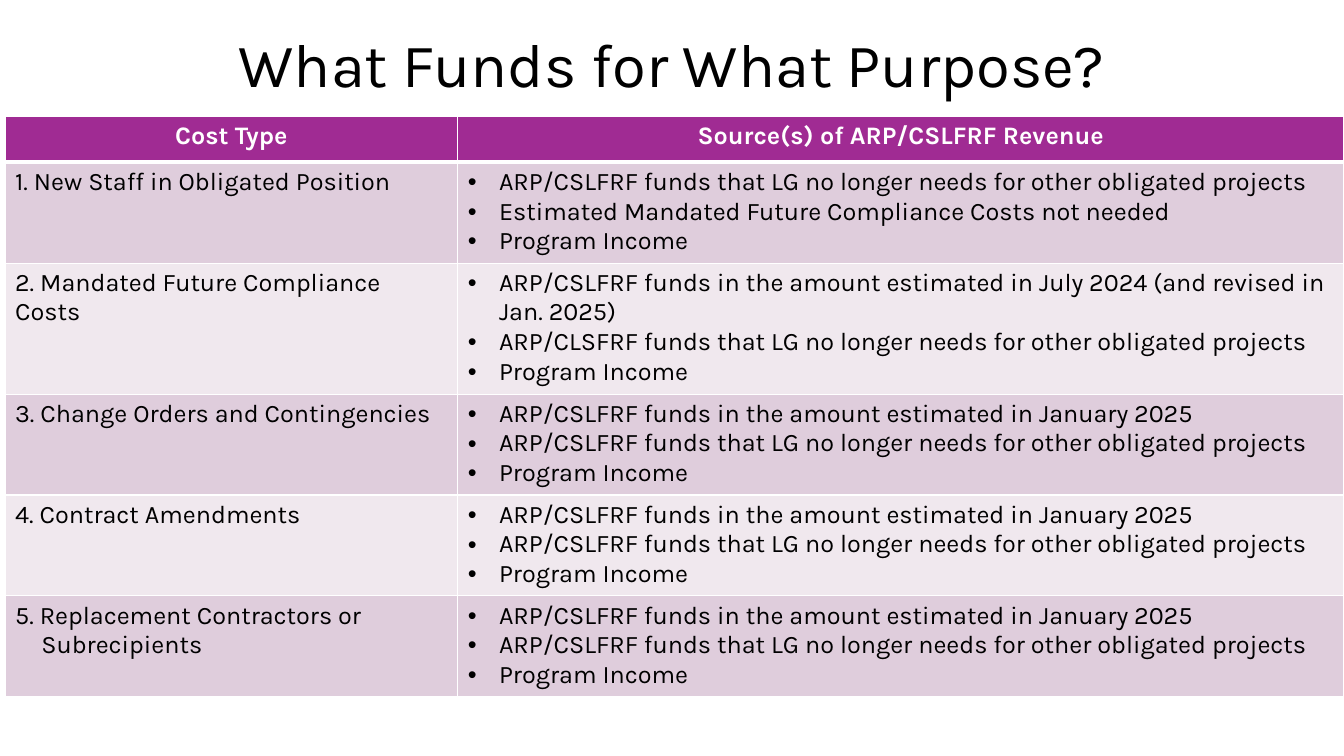
from lxml import etree
from pptx import Presentation, util as u
from pptx.dml.color import RGBColor
from pptx.enum import text
from pptx.oxml.ns import qn

# Content
TITLE = "What Funds for What Purpose?"
HEADS = ("Cost Type", "Source(s) of ARP/CSLFRF Revenue")
SPARE = "ARP/CSLFRF funds that LG no longer needs for other obligated projects"
JAN = "ARP/CSLFRF funds in the amount estimated in January 2025"
INCOME = "Program Income"
COSTS = [
    ("1. New Staff in Obligated Position",
     (SPARE, "Estimated Mandated Future Compliance Costs not needed", INCOME)),
    ("2. Mandated Future Compliance Costs",
     ("ARP/CSLFRF funds in the amount estimated in July 2024 (and revised in Jan. 2025)",
      "ARP/CLSFRF funds that LG no longer needs for other obligated projects", INCOME)),
    ("3. Change Orders and Contingencies", (JAN, SPARE, INCOME)),
    ("4. Contract Amendments", (JAN, SPARE, INCOME)),
    ("5. Replacement Contractors or Subrecipients", (JAN, SPARE, INCOME)),
]
HANG = {5: 26}  # hanging indent of the cost name, by row

# Look
FONT = "Karla"
HUES = {"ink": "000000", "white": "FFFFFF", "head": "A02B93",
        "odd": "DFCDDC", "even": "F0E8EE"}
COLS = (449, 879)
ROW = 46
BULLET = 31


def px(n):
    return u.Emu(n * 9144)  # 100 px to the inch


def rgb(name):
    return RGBColor.from_string(HUES[name])


def write(par, words, size, hue="ink", bold=False):
    run = par.add_run()
    run.text = words
    font = run.font
    font.name, font.size, font.bold = FONT, u.Pt(size), bold
    font.color.rgb = rgb(hue)


def indent(par, left, mark=None):
    props = par._p.get_or_add_pPr()
    props.set("marL", str(px(left)))
    props.set("indent", str(-px(left)))
    if mark:
        etree.SubElement(props, qn("a:buFont")).set("typeface", "Arial")
        etree.SubElement(props, qn("a:buChar")).set("char", mark)


def paint(cell, hue, base=1):
    props = cell._tc.get_or_add_tcPr()
    for side, width in (("L", 1), ("R", 1), ("T", 1), ("B", base)):
        line = etree.SubElement(props, qn("a:ln" + side), w=str(u.Pt(width)))
        fill = etree.SubElement(line, qn("a:solidFill"))
        etree.SubElement(fill, qn("a:srgbClr"), val=HUES["white"])
    cell.fill.solid()
    cell.fill.fore_color.rgb = rgb(hue)


deck = Presentation()
deck.slide_width, deck.slide_height = u.Inches(13.33), u.Inches(7.5)
slide = deck.slides.add_slide(deck.slide_layouts[6])

# Title
box = slide.shapes.add_textbox(px(92), px(-6), px(1150), px(145))
frame = box.text_frame
frame.word_wrap = True
frame.vertical_anchor = text.MSO_ANCHOR.MIDDLE
par = frame.paragraphs[0]
par.alignment = text.PP_ALIGN.CENTER
par.line_spacing = 0.9
write(par, TITLE, 44)

# Table grid
grid = slide.shapes.add_table(len(COSTS) + 1, len(COLS),
                              px(5), px(115), px(sum(COLS)), px(576))
table = grid.table
for col, width in zip(table.columns, COLS):
    col.width = px(width)
for row in table.rows:
    row.height = px(ROW)
grid.height = px(576)

# Header row
for c, head in enumerate(HEADS):
    cell = table.cell(0, c)
    paint(cell, "head", 3)
    par = cell.text_frame.paragraphs[0]
    par.alignment = text.PP_ALIGN.CENTER
    write(par, head, 18, "white", True)

# Cost rows
for r, (cost, funds) in enumerate(COSTS, 1):
    name, source = table.cell(r, 0), table.cell(r, 1)
    for cell in (name, source):
        paint(cell, "odd" if r % 2 else "even")
    par = name.text_frame.paragraphs[0]
    if r in HANG:
        indent(par, HANG[r])
    write(par, cost, 18)
    for i, fund in enumerate(funds):
        body = source.text_frame
        par = body.add_paragraph() if i else body.paragraphs[0]
        indent(par, BULLET, "•")
        write(par, fund, 18)

deck.save("out.pptx")
